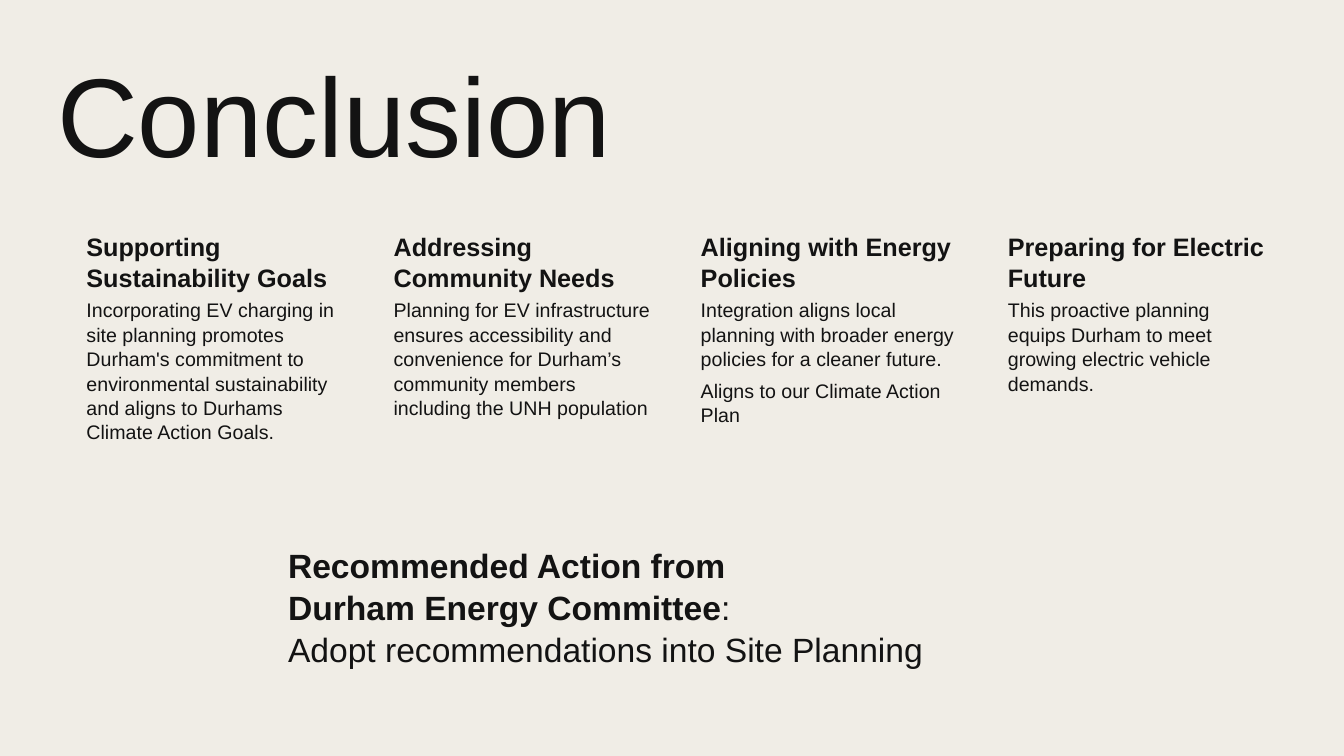
"""Build the conclusion slide on electric vehicle planning."""
from pptx import Presentation
from pptx.dml.color import RGBColor
from pptx.enum.text import MSO_ANCHOR, PP_ALIGN
from pptx.util import Cm, Pt

TOP = MSO_ANCHOR.TOP
LEFT = PP_ALIGN.LEFT

BENEFITS = [
    ("Supporting Sustainability Goals",
     "Incorporating EV charging in site planning promotes Durham's commitment to "
     "environmental sustainability and aligns to Durhams Climate Action Goals."),
    ("Addressing Community Needs",
     "Planning for EV infrastructure ensures accessibility and convenience for "
     "Durham’s community members including the UNH population"),
    ("Aligning with Energy Policies",
     "Integration aligns local planning with broader energy policies for a cleaner future.\n"
     "Aligns to our Climate Action Plan"),
    ("Preparing for Electric Future",
     "This proactive planning equips Durham to meet growing electric vehicle demands."),
]
COLUMN_LEFT, COLUMN_PITCH, COLUMN_WIDTH = 1.8, 7.74, 7.04
HEADING_TOP, HEADING_HEIGHT, DETAIL_HEIGHT = 5.72, 1.72, 6.1


def color(value):
    return RGBColor.from_string(value)


class ConclusionSlide:
    font_name = "Arial"
    ink = "131313"
    paper = "F0EDE6"

    def __init__(self, deck):
        self.slide = deck.slides.add_slide(deck.slide_layouts[6])
        fill = self.slide.background.fill
        fill.solid()
        fill.fore_color.rgb = color(self.paper)

    def style(self, run, size, bold):
        run.font.name = self.font_name
        run.font.size = Pt(size)
        run.font.bold = bold
        run.font.color.rgb = color(self.ink)

    def text(self, content, box, size, bold=False, insets=(0.25, 0.13, 0.25, 0.13),
             line_spacing=1.04, space_after=0):
        frame = self.slide.shapes.add_textbox(*map(Cm, box)).text_frame
        frame.word_wrap = True
        frame.vertical_anchor = TOP
        (frame.margin_left, frame.margin_top,
         frame.margin_right, frame.margin_bottom) = map(Cm, insets)
        frame.text = content
        for paragraph in frame.paragraphs:
            paragraph.alignment = LEFT
            paragraph.line_spacing = line_spacing
            paragraph.space_after = Pt(space_after)
            for run in paragraph.runs:
                self.style(run, size, bold)
        return frame

    def benefit(self, left, heading, detail):
        self.text(heading, (left, HEADING_TOP, COLUMN_WIDTH, HEADING_HEIGHT), 18,
                  bold=True, insets=(0.38, 0.08, 0.08, 0.08))
        self.text(detail, (left, HEADING_TOP + HEADING_HEIGHT, COLUMN_WIDTH, DETAIL_HEIGHT),
                  14, insets=(0.38, 0.05, 0.05, 0.05), space_after=5)

    def recommendation(self, lead, action, box, size):
        paragraph = self.text(lead, box, size, bold=True).paragraphs[0]
        colon = paragraph.add_run()
        colon.text = ": "
        paragraph.add_line_break()
        proposal = paragraph.add_run()
        proposal.text = action
        for run in (colon, proposal):
            self.style(run, size, False)


def main():
    deck = Presentation()
    deck.slide_width, deck.slide_height = Cm(33.87), Cm(19.05)
    conclusion = ConclusionSlide(deck)
    conclusion.text("Conclusion", (1.19, 1.19, 30.25, 4.52), 80,
                    insets=(0.25, 0.35, 0.25, 0.13), line_spacing=0.9)
    for column, (heading, detail) in enumerate(BENEFITS):
        conclusion.benefit(COLUMN_LEFT + column * COLUMN_PITCH, heading, detail)
    conclusion.recommendation("Recommended Action from \vDurham Energy Committee",
                              "Adopt recommendations into Site Planning",
                              (7.01, 13.56, 19.86, 3.33), 24)
    deck.save("out.pptx")


if __name__ == "__main__":
    main()
